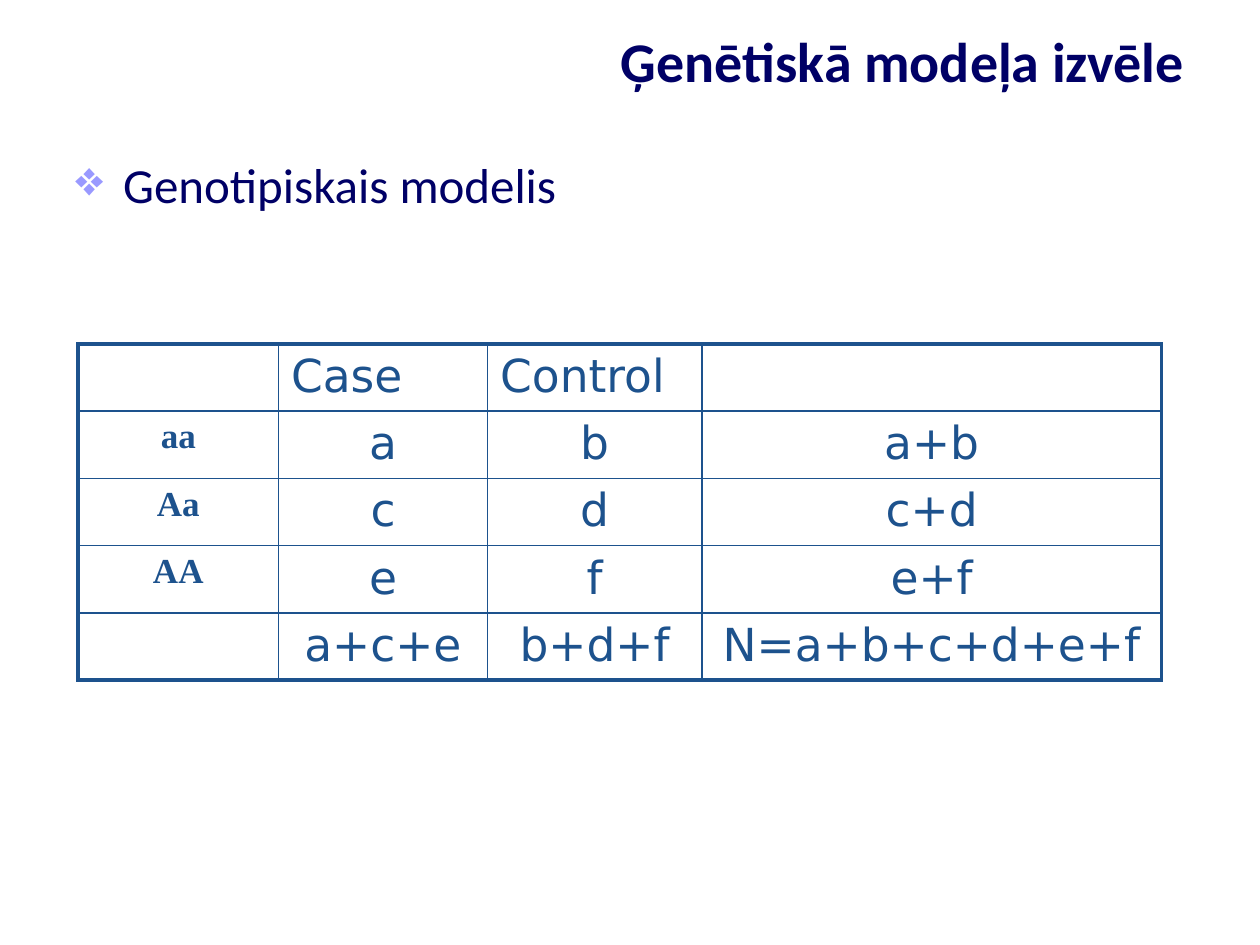
from lxml.etree import SubElement
from pptx import Presentation
from pptx.dml.color import RGBColor
from pptx.enum.text import MSO_ANCHOR, PP_ALIGN
from pptx.oxml.ns import qn
from pptx.util import Inches, Pt

NAVY = RGBColor(0x00, 0x00, 0x66)
BLUE = RGBColor(0x1D, 0x52, 0x8D)
LILAC = RGBColor(0x99, 0x99, 0xFF)

HEAD = {"name": "Calibri", "size": Pt(32), "bold": True}
BODY = {"name": "Calibri", "size": Pt(28), "bold": False}
CELL = {"name": "DejaVu Sans", "size": Pt(26), "bold": False}
GENE = {"name": "Times New Roman", "size": Pt(20), "bold": True}

COLS = [1.59, 1.66, 1.7, 3.65]
ROW = 0.52
ROWS = [
    ["", "Case", "Control", ""],
    ["aa", "a", "b", "a+b"],
    ["Aa", "c", "d", "c+d"],
    ["AA", "e", "f", "e+f"],
    ["", "a+c+e", "b+d+f", "N=a+b+c+d+e+f"],
]


def write(para, text, style, color, align=PP_ALIGN.LEFT):
    para.alignment = align
    run = para.add_run()
    run.text = text
    for key, value in style.items():
        setattr(run.font, key, value)
    run.font.color.rgb = color


def add_box(slide, box, anchor):
    frame = slide.shapes.add_textbox(*map(Inches, box)).text_frame
    frame.word_wrap = True
    frame.vertical_anchor = anchor
    return frame.paragraphs[0]


def add_title(slide, box):
    para = add_box(slide, box, MSO_ANCHOR.MIDDLE)
    write(para, "Ģenētiskā modeļa izvēle", HEAD, NAVY, PP_ALIGN.RIGHT)


def add_body(slide, box):
    para = add_box(slide, box, MSO_ANCHOR.TOP)
    props = para._p.get_or_add_pPr()
    props.set("marL", str(Inches(0.38)))
    props.set("indent", str(-Inches(0.38)))
    tint = SubElement(props, qn("a:buClr"))
    SubElement(tint, qn("a:srgbClr"), val=str(LILAC))
    SubElement(props, qn("a:buChar"), char="❖")
    write(para, "Genotipiskais modelis", BODY, NAVY)


def set_edges(cell, widths):
    """Draw the cell borders; widths maps L, R, T, B (in that order) to points."""
    props = cell._tc.get_or_add_tcPr()
    for spot, (side, width) in enumerate(widths.items()):
        line = SubElement(props, qn(f"a:ln{side}"), w=str(Pt(width)))
        fill = SubElement(line, qn("a:solidFill"))
        SubElement(fill, qn("a:srgbClr"), val=str(BLUE))
        props.insert(spot, line)


def add_grid(slide, left, top):
    box = map(Inches, (left, top, sum(COLS), ROW * len(ROWS)))
    table = slide.shapes.add_table(len(ROWS), len(COLS), *box).table
    table.first_row = table.horz_banding = False
    for col, width in zip(table.columns, COLS):
        col.width = Inches(width)
    last_row, last_col = len(ROWS) - 1, len(COLS) - 1
    for r, texts in enumerate(ROWS):
        for c, text in enumerate(texts):
            cell = table.cell(r, c)
            cell.fill.background()
            outer = {"L": c == 0, "R": c == last_col,
                     "T": r == 0, "B": r == last_row}
            set_edges(cell, {side: 2.25 if edge else 1
                             for side, edge in outer.items()})
            if text:
                write(cell.text_frame.paragraphs[0], text,
                      CELL if c else GENE, BLUE,
                      PP_ALIGN.CENTER if r else PP_ALIGN.LEFT)


def main():
    deck = Presentation()
    deck.slide_width, deck.slide_height = Inches(10), Inches(7.5)
    slide = deck.slides.add_slide(deck.slide_layouts[6])
    add_body(slide, (0.5, 1.18, 9, 5.74))
    add_title(slide, (0.5, 0.17, 9, 0.62))
    add_grid(slide, 0.62, 2.73)
    deck.save("out.pptx")


if __name__ == "__main__":
    main()
